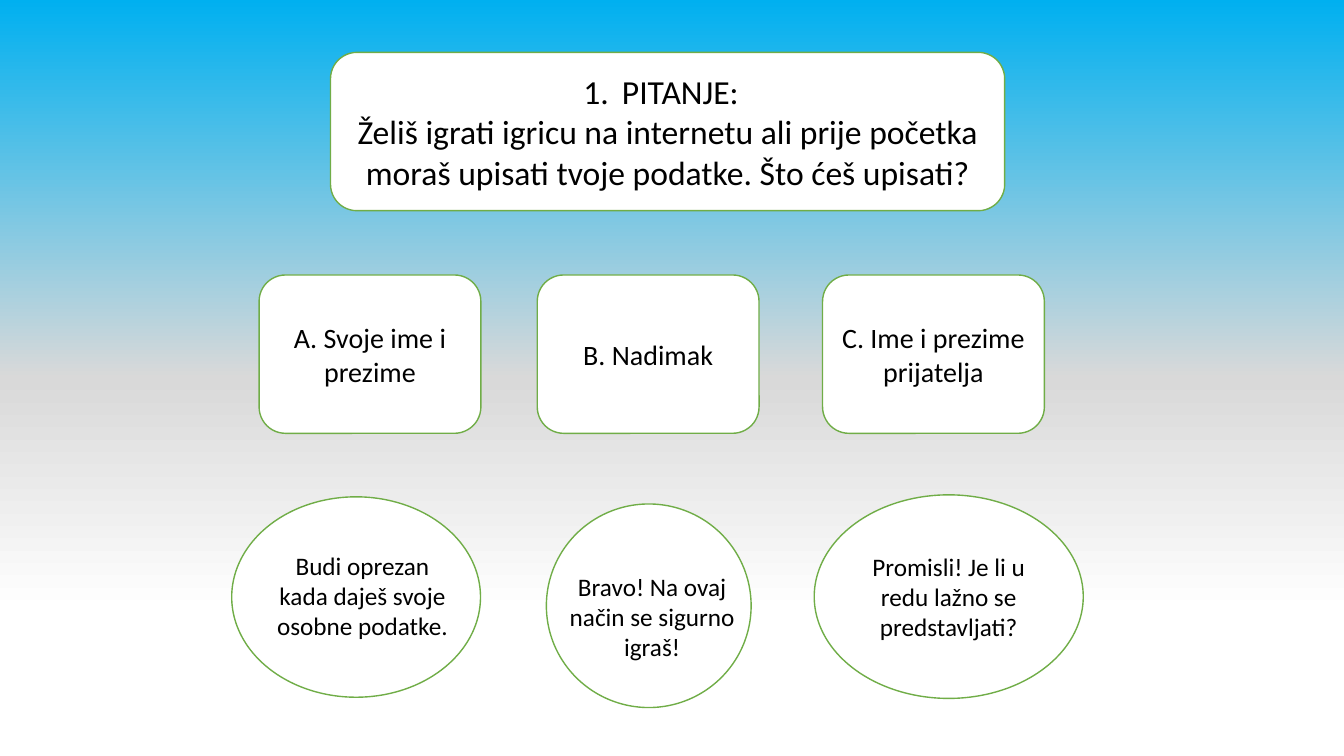
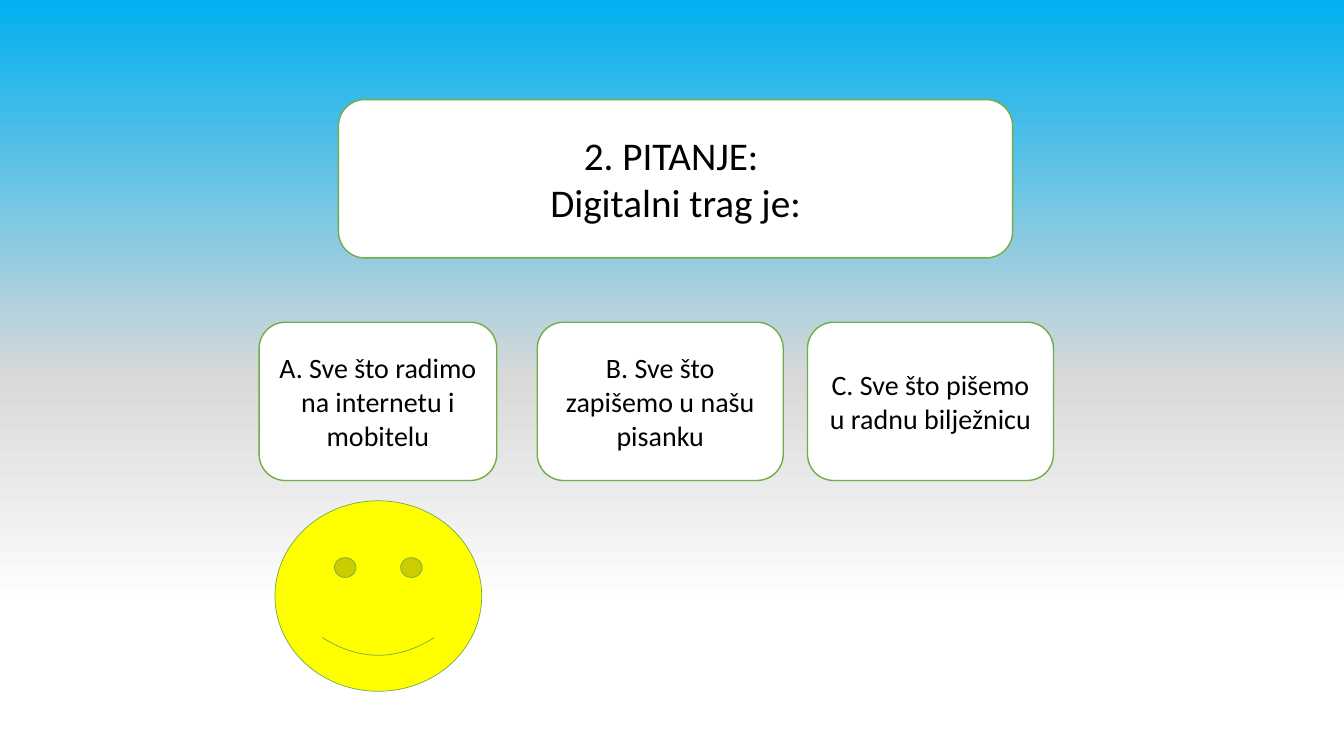
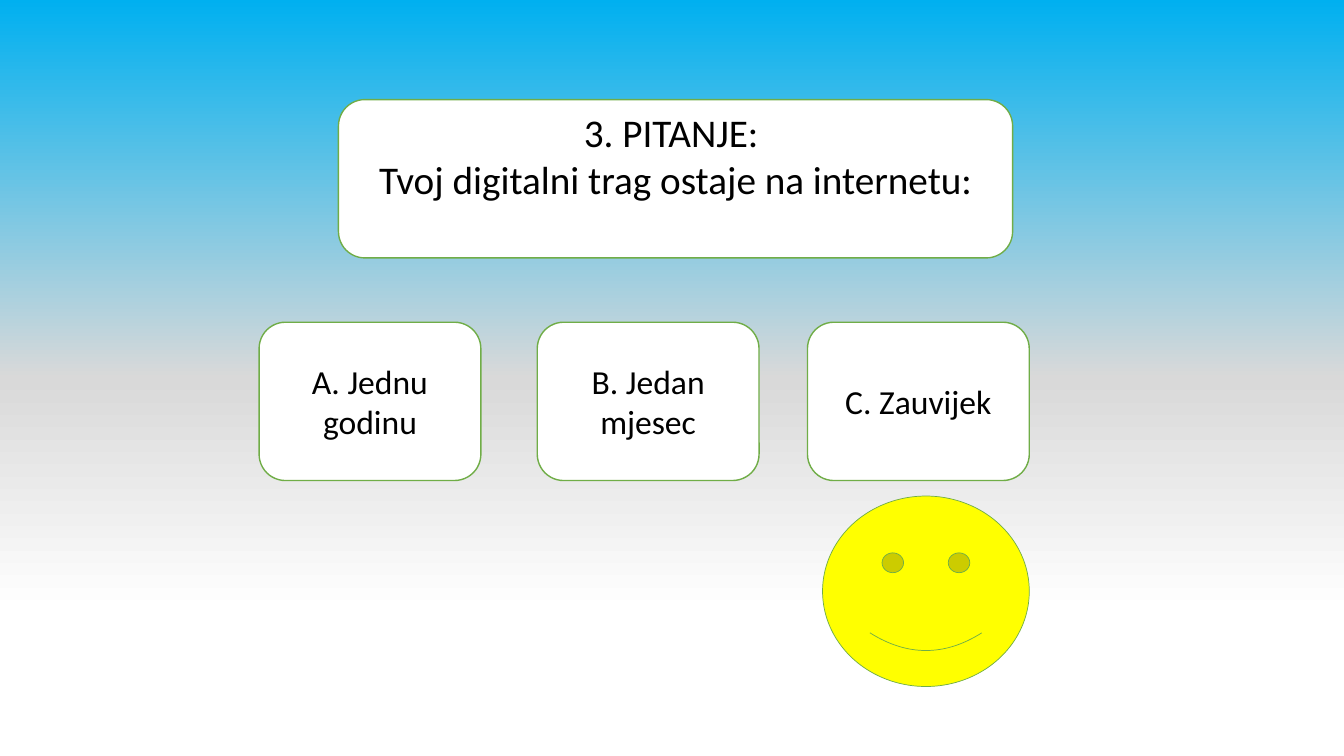
from copy import deepcopy

from lxml import etree
from pptx import Presentation
from pptx.dml.color import RGBColor
from pptx.enum import shapes, text
from pptx.oxml.ns import qn
from pptx.util import Cm, Pt

COLORS = {"sky": "00B0F0", "mist": "D9D9D9", "white": "FFFFFF",
          "green": "70AD47", "yellow": "FFFF00", "ink": "000000"}
BACKGROUND = [(0, "sky"), (0.5, "mist"), (0.81, "white")]
FONT = "Calibri"
FORM = shapes.MSO_SHAPE

# Lengths in centimetres; boxes are (left, top, width, height)
QUESTION_SIZE = (16.99, 3.99)
ANSWER_HEIGHT = 3.99
ANSWER_DROP = 5.61
SMILEY_SIZE = (5.21, 4.8)

QUIZ = [
    {"question": "Želiš igrati igricu na internetu ali prije početka "
                 "moraš upisati tvoje podatke. Što ćeš upisati?",
     "at": (8.33, 1.32), "question_pt": 24, "answer_pt": 20,
     "answers": [("A. Svoje ime i prezime", 6.53, 5.59),
                 ("B. Nadimak", 13.54, 5.59),
                 ("C. Ime i prezime prijatelja", 20.73, 5.59)],
     # text, bubble, separate text frame if the text is off the bubble's centre
     "feedback": [
         ("Budi oprezan kada daješ svoje osobne podatke.",
          (5.84, 12.52, 6.27, 5.05), (6.53, 13.74, 5.21, 2.57)),
         ("Bravo! Na ovaj način se sigurno igraš!",
          (13.77, 12.7, 5.16, 5.13), (13.97, 14.27, 4.93, 2.57)),
         ("Promisli! Je li u redu lažno se predstavljati?",
          (20.52, 12.47, 6.78, 5.13), None)]},
    {"question": "Digitalni trag je:",
     "at": (8.53, 2.51), "question_pt": 28, "answer_pt": 20,
     "answers": [("A. Sve što radimo na internetu i mobitelu", 6.53, 5.99),
                 ("B. Sve što zapišemo u našu pisanku", 13.54, 6.2),
                 ("C. Sve što pišemo u radnu bilježnicu", 20.35, 6.2)],
     "smiley": (6.93, 12.62)},
    {"question": "Tvoj digitalni trag ostaje na internetu:",
     "at": (8.53, 2.51), "question_pt": 28, "answer_pt": 24, "lift": 1.2,
     "answers": [("A. Jednu godinu", 6.53, 5.59),
                 ("B. Jedan mjesec", 13.54, 5.59),
                 ("C. Zauvijek", 20.35, 5.59)],
     "smiley": (20.73, 12.5)},
]


def rgb(name):
    return RGBColor.from_string(COLORS[name])


def paint_background(master):
    fill = master.background.fill
    fill.gradient()
    fill.gradient_angle = 270
    stop_list = master.element.find(".//" + qn("a:gsLst"))
    stop_list.append(deepcopy(stop_list[0]))
    for stop, (position, color) in zip(fill.gradient_stops, BACKGROUND):
        stop.position = position
        stop.color.rgb = rgb(color)


def add_form(page, form, box, fill="white", line_pt=1):
    shape = page.shapes.add_shape(form, *map(Cm, box))
    shape.shadow.inherit = False
    shape.fill.solid()
    shape.fill.fore_color.rgb = rgb(fill)
    shape.line.color.rgb = rgb("green")
    shape.line.width = Pt(line_pt)
    return shape


def write(shape, lines, size, anchor=text.MSO_ANCHOR.MIDDLE, number=None):
    """Fill a shape with centred lines; a number is set before the first one."""
    frame = shape.text_frame
    frame.word_wrap = True
    frame.auto_size = text.MSO_AUTO_SIZE.NONE
    frame.vertical_anchor = anchor
    for index, line in enumerate(lines):
        para = frame.add_paragraph() if index else frame.paragraphs[0]
        para.text = line
        para.alignment = text.PP_ALIGN.CENTER
        para.line_spacing = 1.0
        if number and index == 0:
            properties = para._p.get_or_add_pPr()
            properties.set("marL", "0")
            properties.set("indent", str(-Cm(0.97)))
            etree.SubElement(properties, qn("a:buFont"), typeface="+mj-lt")
            etree.SubElement(properties, qn("a:buAutoNum"),
                             type="arabicPeriod", startAt=str(number))
        para.font.name = FONT
        para.font.size = Pt(size)
        para.font.color.rgb = rgb("ink")


def add_question(page, number, item):
    box = (*item["at"], *QUESTION_SIZE)
    card = add_form(page, FORM.FLOWCHART_ALTERNATE_PROCESS, box)
    title = page.shapes.title
    title.left, title.top, title.width, title.height = map(Cm, box)
    title.element.addprevious(card.element)
    write(title, ["PITANJE:", item["question"]], item["question_pt"],
          number=number)
    title.text_frame.margin_bottom = Cm(0.13 + item.get("lift", 0))


def add_feedback(page, message, bubble, frame):
    target = add_form(page, FORM.OVAL, bubble)
    anchor = text.MSO_ANCHOR.MIDDLE
    if frame:
        target = page.shapes.add_textbox(*map(Cm, frame))
        anchor = text.MSO_ANCHOR.TOP
    write(target, [message], 18, anchor)


def main():
    deck = Presentation()
    deck.slide_width, deck.slide_height = Cm(33.87), Cm(19.05)
    paint_background(deck.slide_master)
    for number, item in enumerate(QUIZ, 1):
        page = deck.slides.add_slide(deck.slide_layouts.get_by_name("Title Only"))
        add_question(page, number, item)
        top = item["at"][1] + ANSWER_DROP
        for answer, left, width in item["answers"]:
            card = add_form(page, FORM.ROUNDED_RECTANGLE,
                            (left, top, width, ANSWER_HEIGHT))
            write(card, [answer], item["answer_pt"])
        for feedback in item.get("feedback", []):
            add_feedback(page, *feedback)
        if "smiley" in item:
            add_form(page, FORM.SMILEY_FACE, (*item["smiley"], *SMILEY_SIZE),
                     "yellow", 0.5)
    deck.save("out.pptx")


if __name__ == "__main__":
    main()
